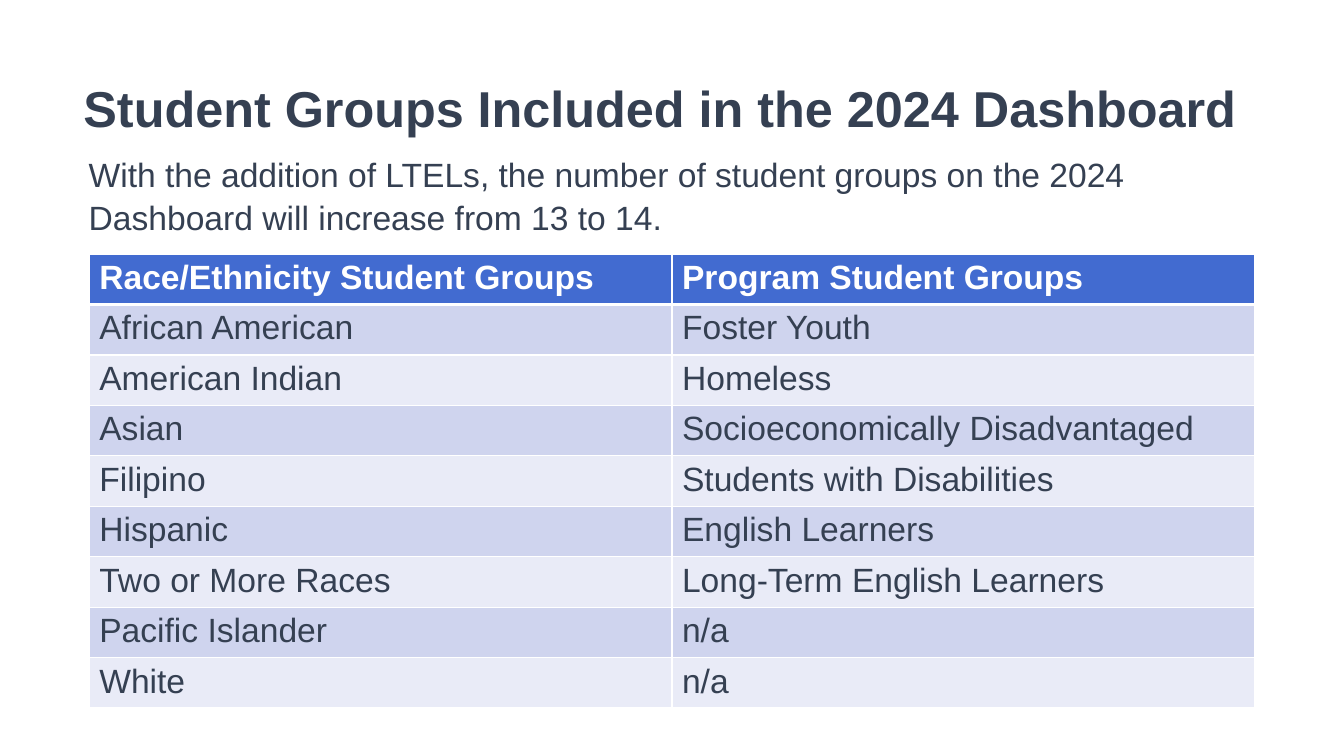
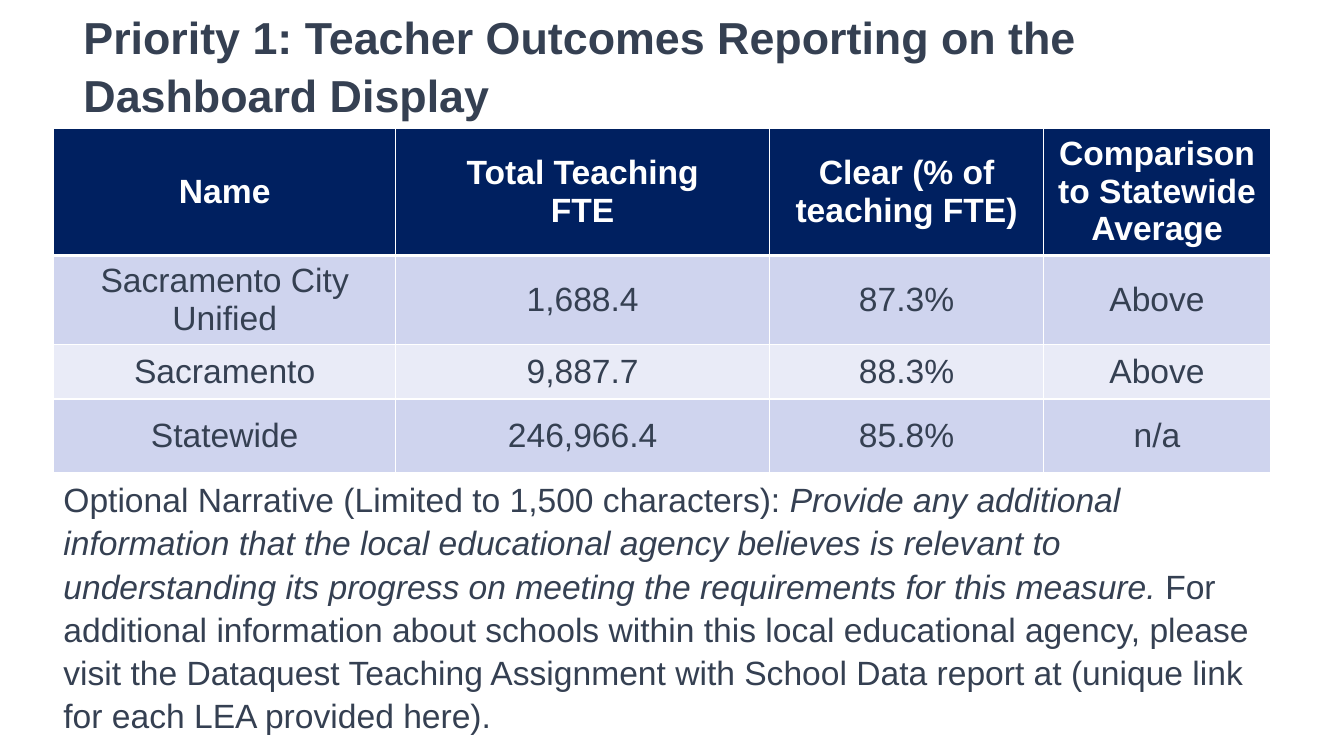
from lxml.etree import SubElement
from pptx import Presentation
from pptx.dml.color import RGBColor
from pptx.enum.text import MSO_ANCHOR as Anchor, PP_ALIGN as Align
from pptx.oxml.ns import qn
from pptx.util import Pt

# Scale: 96 px to the inch
PX = 9525

# Shared style
FONT = "Arial"
INK = RGBColor(0x35, 0x40, 0x52)
WHITE = RGBColor(0xFF, 0xFF, 0xFF)
BLUE = RGBColor(0x42, 0x6B, 0xD0)
NAVY = RGBColor(0x00, 0x20, 0x60)
BANDS = [RGBColor(0xCF, 0xD4, 0xEE), RGBColor(0xE9, 0xEB, 0xF7)]
BODY_SIZE = 24
LINE_SPACING = 1.07


def add_span(para, text, size=BODY_SIZE, color=INK, bold=False, italic=False):
    for index, line in enumerate(text.split("\n")):
        if index:
            para.add_line_break()
        span = para.add_run()
        span.text = line
        span.font.name = FONT
        span.font.size = Pt(size)
        span.font.bold = bold
        span.font.italic = italic
        span.font.color.rgb = color


def add_box(page, at, anchor=Anchor.TOP):
    box = page.shapes.add_textbox(*[value * PX for value in at])
    box.text_frame.word_wrap = True
    box.text_frame.vertical_anchor = anchor
    para = box.text_frame.paragraphs[0]
    para.line_spacing = LINE_SPACING
    return para


# Content of the two pages; spans are (text, italic)
PAGES = [
    {
        "title": "Student Groups Included in the 2024 Dashboard",
        "title_at": (70, 46, 1140, 108),
        "title_size": 36,
        "body_at": (75, 139, 1119, 87),
        "body": [
            ("With the addition of LTELs, the number of student groups on the 2024 "
             "Dashboard will increase from 13 to 14.", False),
        ],
        "table_at": (85, 242),
        "columns": [555, 555],
        "heights": [39] * 9,
        "header_fill": BLUE,
        "centered": False,
        "rows": [
            ("Race/Ethnicity Student Groups", "Program Student Groups"),
            ("African American", "Foster Youth"),
            ("American Indian", "Homeless"),
            ("Asian", "Socioeconomically Disadvantaged"),
            ("Filipino", "Students with Disabilities"),
            ("Hispanic", "English Learners"),
            ("Two or More Races", "Long-Term English Learners"),
            ("Pacific Islander", "n/a"),
            ("White", "n/a"),
        ],
    },
    {
        "title": "Priority 1: Teacher Outcomes Reporting on the Dashboard Display",
        "title_at": (70, 28, 1140, 65),
        "title_size": 32,
        "body_at": (51, 449, 1174, 242),
        "body": [
            ("Optional Narrative (Limited to 1,500 characters): ", False),
            ("Provide any additional information that the local educational agency "
             "believes is relevant to understanding its progress on meeting the "
             "requirements for this measure. ", True),
            ("For additional information about schools within this local educational "
             "agency, please visit the Dataquest Teaching Assignment with School Data "
             "report at (unique link for each LEA provided here).", False),
        ],
        "table_at": (51, 122),
        "columns": [326, 356, 261, 216],
        "heights": [98, 52, 52, 70],
        "header_fill": NAVY,
        "centered": True,
        "rows": [
            ("Name", "Total Teaching\nFTE", "Clear (% of teaching FTE)",
             "Comparison to Statewide Average"),
            ("Sacramento City Unified", "1,688.4", "87.3%", "Above"),
            ("Sacramento", "9,887.7", "88.3%", "Above"),
            ("Statewide", "246,966.4", "85.8%", "n/a"),
        ],
    },
]

deck = Presentation()
deck.slide_width, deck.slide_height = 1280 * PX, 720 * PX

for content in PAGES:
    page = deck.slides.add_slide(deck.slide_layouts[6])

    # Title
    para = add_box(page, content["title_at"], Anchor.MIDDLE)
    add_span(para, content["title"], content["title_size"], bold=True)

    # Table
    rows, columns, heights = content["rows"], content["columns"], content["heights"]
    left, top = content["table_at"]
    table = page.shapes.add_table(
        len(rows), len(columns), left * PX, top * PX,
        sum(columns) * PX, sum(heights) * PX).table
    for column, width in zip(table.columns, columns):
        column.width = width * PX
    for row, height in zip(table.rows, heights):
        row.height = height * PX

    for row_index, texts in enumerate(rows):
        header = row_index == 0
        for column_index, text in enumerate(texts):
            cell = table.cell(row_index, column_index)
            para = cell.text_frame.paragraphs[0]
            add_span(para, text, color=WHITE if header else INK, bold=header)
            if content["centered"]:
                para.alignment = Align.CENTER
                cell.vertical_anchor = Anchor.MIDDLE
                inset = (3 if header else 4) * PX
                cell.margin_left = cell.margin_right = inset
                cell.margin_top = cell.margin_bottom = inset

            # White borders, thicker under the header
            properties = cell._tc.get_or_add_tcPr()
            for side in ("L", "R", "T", "B"):
                thick = (side == "B" and header) or (side == "T" and row_index == 1)
                line = SubElement(properties, qn(f"a:ln{side}"),
                                  w=str(Pt(3 if thick else 1)))
                SubElement(SubElement(line, qn("a:solidFill")),
                           qn("a:srgbClr"), val=str(WHITE))
            cell.fill.solid()
            cell.fill.fore_color.rgb = (
                content["header_fill"] if header else BANDS[(row_index - 1) % 2])

    # Body text
    para = add_box(page, content["body_at"])
    for text, italic in content["body"]:
        add_span(para, text, italic=italic)

deck.save("out.pptx")
